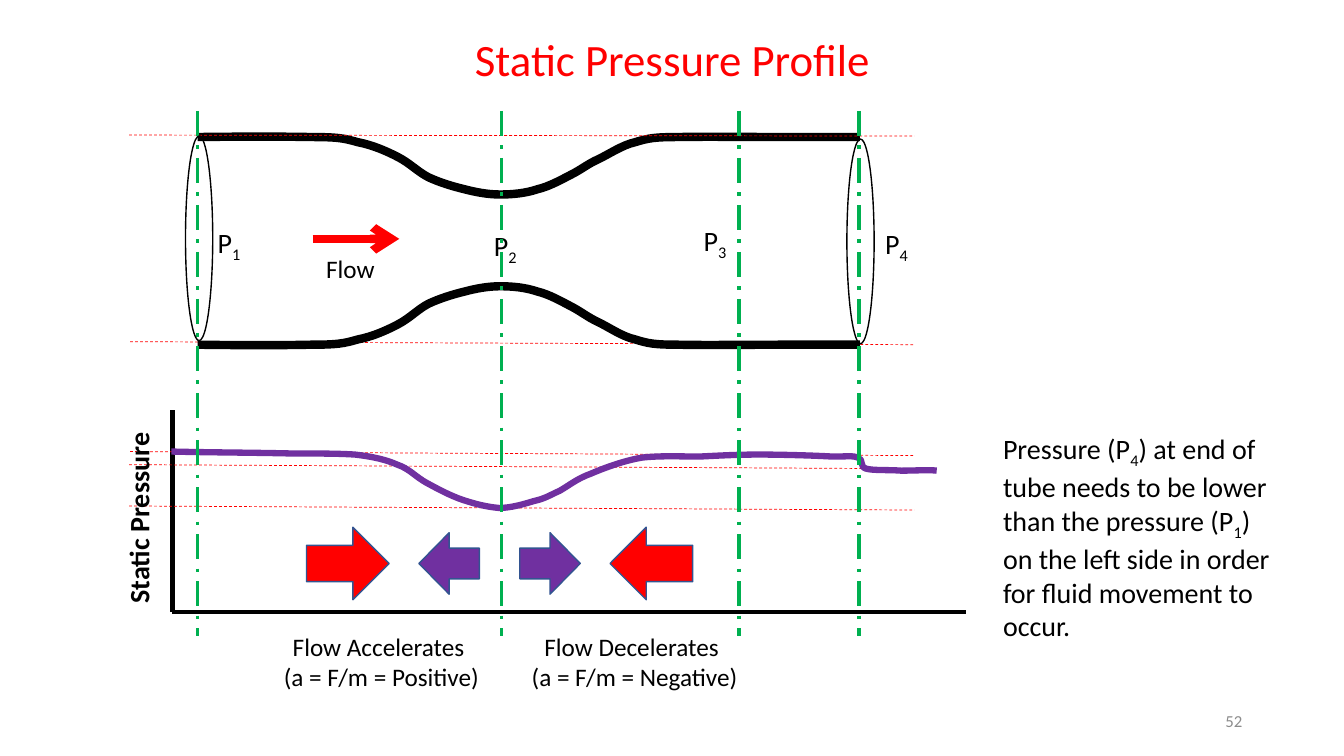
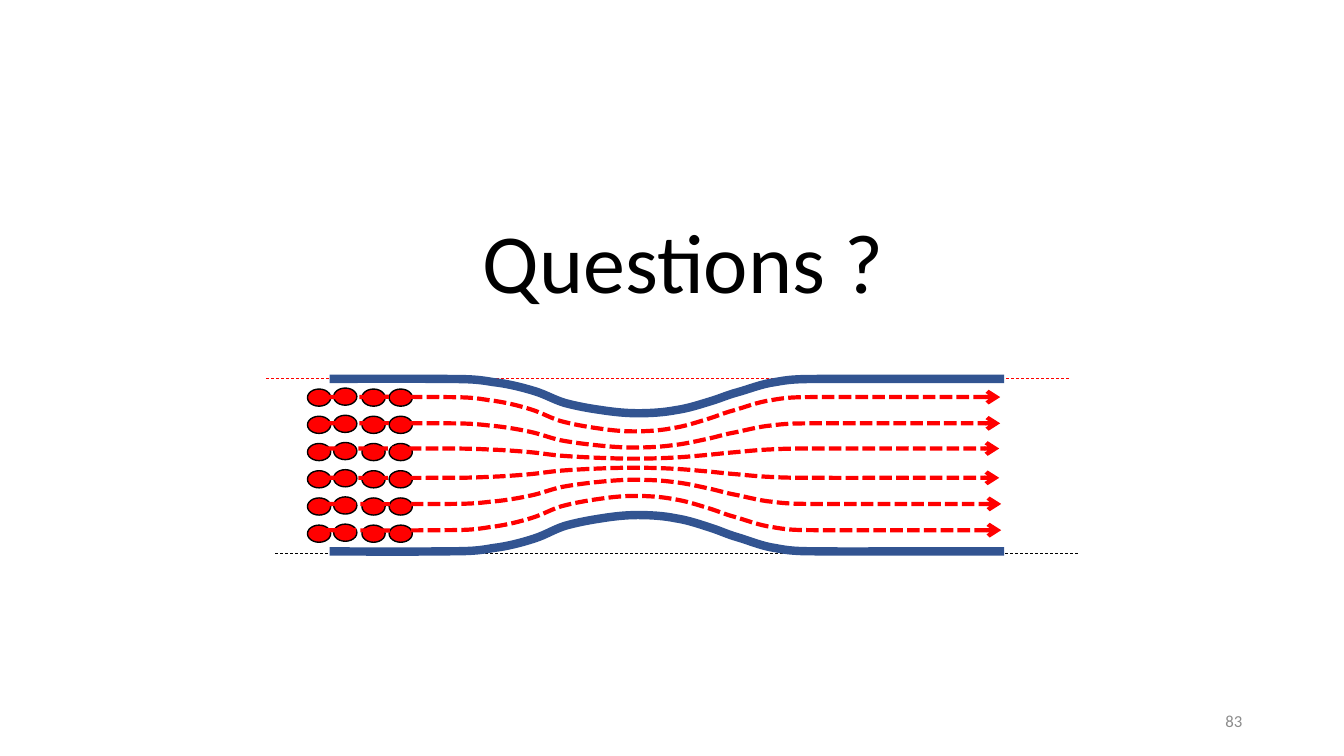
from itertools import product

from lxml.etree import SubElement
from pptx import Presentation
from pptx.dml.color import RGBColor
from pptx.enum.dml import MSO_LINE
from pptx.enum.shapes import MSO_CONNECTOR, MSO_SHAPE
from pptx.enum.text import MSO_ANCHOR, PP_ALIGN
from pptx.oxml.ns import qn
from pptx.util import Pt

PX = 9144  # EMU per px, 100 px to the inch


class Theme:
    font = "Calibri"
    black, red, green = "000000", "FF0000", "00B050"
    purple, blue, grey = "7030A0", "325491", "8C8C8C"
    closing, title, body, label, footer = 60, 32, 20, 18, 12
    wall, curve, axis, stream, station, outline, guide = 6, 4.5, 3, 3, 2.25, 1, 0.5


# ---- Content; lengths in px ----
# Venturi outline: x in px of a 657 px tube, y in percent of the throat depth.
# A start point, then cubic curves of three points each.
TUBE_LENGTH = 657
VENTURI = [
    (0, 0),
    (43, -1), (86, -1), (112, 0), (139, 0), (145, 2), (159, 9),
    (174, 14), (188, 25), (199, 35), (211, 46), (218, 60), (229, 70),
    (240, 79), (253, 86), (265, 91), (276, 96), (288, 100), (300, 100),
    (312, 100), (325, 98), (337, 91), (349, 86), (361, 74), (371, 65),
    (381, 56), (387, 47), (397, 39), (408, 30), (421, 14), (434, 9),
    (447, 2), (453, 0), (477, 0), (502, -1), (549, 0), (579, 0),
    (605, 0), (631, 0), (657, 0),
]
PRESSURE_CURVE = [
    (170, 448),
    (210, 449), (250, 449), (291, 450), (321, 450), (335, 450), (352, 451),
    (369, 453), (383, 456), (394, 461), (406, 465), (412, 473), (423, 479),
    (434, 485), (447, 492), (459, 496), (471, 500), (483, 503), (495, 504),
    (507, 504), (520, 500), (530, 497), (540, 495), (546, 491), (555, 487),
    (564, 482), (572, 475), (586, 470), (600, 464), (619, 457), (637, 454),
    (655, 452), (675, 453), (694, 453), (714, 452), (731, 451), (753, 451),
    (775, 451), (809, 452), (825, 453), (842, 453), (846, 452), (851, 454),
    (857, 456), (852, 463), (859, 465), (866, 467), (882, 466), (894, 467),
    (905, 467), (923, 466), (929, 467),
]
PIPE_GUIDES = [(128, 134, 907, 135), (129, 339, 907, 342)]
PRESSURE_GUIDES = [(129, 448, 907, 452), (128, 502, 907, 506), (128, 461, 907, 465)]
AXES = [(171, 407, 171, 607), (958, 607, 171, 607)]
STATIONS = [196, 497, 733, 852]
PIPE_ENDS = [(184, 135), (840, 138)]
PRESSURE_LABELS = [("P|1|", 206, 219), ("P|2|", 480, 222),
                   ("P|3|", 688, 217), ("P|4|", 868, 220)]
FORCE_ARROWS = [  # box, rotation, colour
    ((415, 529, 61, 60), 270, Theme.purple),
    ((309, 518, 72, 82), 90, Theme.red),
    ((610, 518, 72, 82), 270, Theme.red),
    ((515, 529, 61, 60), 90, Theme.purple),
]
FLOW_LABELS = [
    ("Flow Accelerates\n (a = F/m = Positive)", (264, 621, 223, 71)),
    ("Flow Decelerates\n (a = F/m = Negative)", (500, 621, 253, 71)),
]
# Text between bars is subscript
CONCLUSION = ("Pressure (P|4|) at end of tube needs to be lower than the pressure "
              "(P|1|) on the left side in order for fluid movement to occur.")

CLOSING_GUIDES = [((264, 375, 1060, 375), Theme.red), ((273, 549, 1070, 549), Theme.black)]
CLOSING_LENGTH = 669
CLOSING_WALLS = [(327, 376, 34), (327, 547, -36)]  # left, base, depth
STREAMLINES = [(323, 394, 34), (323, 420, 24), (322, 445, 10),
               (324, 526, -34), (324, 500, -24), (322, 474, -10)]
PARTICLE_COLUMNS = [(305, 386), (331, 385), (359, 386), (386, 386)]
PARTICLE_ROWS, PARTICLE_PITCH = 6, 27


# ---- Drawing helpers ----
def emu(*lengths):
    return [round(length * PX) for length in lengths]


def color(code):
    return RGBColor.from_string(code)


def style_line(shape, code, width, dash=None, arrow=False):
    shape.line.color.rgb = color(code)
    shape.line.width = Pt(width)
    if dash is not None:
        shape.line.dash_style = dash
    if arrow:
        SubElement(shape.line._get_or_add_ln(), qn("a:tailEnd"), type="arrow")


def add_text(slide, text, box, size, code=Theme.black, align=PP_ALIGN.LEFT,
             anchor=MSO_ANCHOR.TOP, bold=False, rotation=0):
    shape = slide.shapes.add_textbox(*emu(*box))
    shape.rotation = rotation
    frame = shape.text_frame
    frame.word_wrap = True
    frame.vertical_anchor = anchor
    for index, line in enumerate(text.split("\n")):
        paragraph = frame.add_paragraph() if index else frame.paragraphs[0]
        paragraph.alignment = align
        for position, piece in enumerate(line.split("|")):
            if not piece:
                continue
            run = paragraph.add_run()
            run.text = piece
            run.font.name = Theme.font
            run.font.size = Pt(size)
            run.font.bold = bold
            run.font.color.rgb = color(code)
            if position % 2:
                run.font._element.set("baseline", "-25000")


def add_line(slide, ends, code, width, dash=None, arrow=False):
    connector = slide.shapes.add_connector(MSO_CONNECTOR.STRAIGHT, *emu(*ends))
    style_line(connector, code, width, dash, arrow)
    SubElement(connector._element.spPr, qn("a:effectLst"))


def add_preset(slide, kind, box, line, fill=None, rotation=0):
    shape = slide.shapes.add_shape(kind, *emu(*box))
    shape.rotation = rotation
    shape.shadow.inherit = False
    if fill:
        shape.fill.solid()
        shape.fill.fore_color.rgb = color(fill)
    else:
        shape.fill.background()
    style_line(shape, line, Theme.outline)


def bend_segments(shape):
    """Join every three straight segments into one cubic curve."""
    segments = list(shape._element.iter(qn("a:lnTo")))
    for first in range(0, len(segments), 3):
        curve, *others = segments[first:first + 3]
        outline = curve.getparent()
        cubic = SubElement(outline, qn("a:cubicBezTo"))
        for segment in (curve, *others):
            cubic.append(segment[0])
            outline.remove(segment)


def add_curve(slide, points, code, width, dash=None, arrow=False):
    start, *rest = [emu(*point) for point in points]
    builder = slide.shapes.build_freeform(*start)
    builder.add_line_segments(rest, close=False)
    shape = builder.convert_to_shape()
    bend_segments(shape)
    shape.fill.background()
    shape.shadow.inherit = False
    style_line(shape, code, width, dash, arrow)


def venturi(left, base, depth, length=TUBE_LENGTH):
    return [(left + x * length / TUBE_LENGTH, base + y * depth / 100) for x, y in VENTURI]


def add_slide(presentation, number):
    slide = presentation.slides.add_slide(presentation.slide_layouts[6])
    add_text(slide, number, (942, 695, 300, 40), Theme.footer, Theme.grey,
             PP_ALIGN.RIGHT, MSO_ANCHOR.MIDDLE)
    return slide


# ---- Slides ----
def build_pressure_slide(presentation):
    slide = add_slide(presentation, "52")
    add_text(slide, "Static Pressure Profile", (310, 27, 714, 64), Theme.title,
             Theme.red, PP_ALIGN.CENTER)

    # Tube
    add_curve(slide, venturi(196, 136, 57), Theme.black, Theme.wall)
    for ends in PIPE_GUIDES:
        add_line(slide, ends, Theme.red, Theme.guide, MSO_LINE.DASH)
    add_curve(slide, venturi(196, 342, -58), Theme.black, Theme.wall)

    # Pressure graph
    for ends in AXES:
        add_line(slide, ends, Theme.black, Theme.axis)
    for text, left, top in PRESSURE_LABELS:
        add_text(slide, text, (left, top, 45, 44), Theme.body)
    for ends in PRESSURE_GUIDES:
        add_line(slide, ends, Theme.red, Theme.guide, MSO_LINE.DASH)
    add_curve(slide, PRESSURE_CURVE, Theme.purple, Theme.curve)
    for x in STATIONS:
        add_line(slide, (x, 110, x, 631), Theme.green, Theme.station,
                 MSO_LINE.LONG_DASH_DOT)
    for left, top in PIPE_ENDS:
        add_preset(slide, MSO_SHAPE.OVAL, (left, top, 27, 203), Theme.black)
    add_text(slide, "Static Pressure", (30, 488, 206, 35), Theme.body,
             bold=True, rotation=270)
    add_text(slide, CONCLUSION, (985, 423, 300, 212), Theme.body)

    # Flow and forces
    add_line(slide, (310, 237, 396, 237), Theme.red, Theme.wall, arrow=True)
    add_text(slide, "Flow", (300, 246, 95, 40), Theme.label, align=PP_ALIGN.CENTER)
    for box, rotation, fill in FORCE_ARROWS:
        add_preset(slide, MSO_SHAPE.UP_ARROW, box, Theme.blue, fill, rotation)
    for text, box in FLOW_LABELS:
        add_text(slide, text, box, Theme.label, align=PP_ALIGN.CENTER)


def build_closing_slide(presentation):
    slide = add_slide(presentation, "83")
    add_text(slide, "Questions ?", (469, 203, 465, 111), Theme.closing)
    for ends, code in CLOSING_GUIDES:
        add_line(slide, ends, code, Theme.guide, MSO_LINE.DASH)

    # Particles
    for (left, top), row in product(PARTICLE_COLUMNS, range(PARTICLE_ROWS)):
        box = (left, top + row * PARTICLE_PITCH, 23, 17)
        add_preset(slide, MSO_SHAPE.OVAL, box, Theme.black, Theme.red)

    # Walls and streamlines
    for wall in CLOSING_WALLS:
        add_curve(slide, venturi(*wall, CLOSING_LENGTH), Theme.blue, Theme.wall)
    for streamline in STREAMLINES:
        add_curve(slide, venturi(*streamline, CLOSING_LENGTH), Theme.red, Theme.stream,
                  MSO_LINE.SQUARE_DOT, arrow=True)


def main():
    presentation = Presentation()
    presentation.slide_width, presentation.slide_height = emu(1333, 750)
    build_pressure_slide(presentation)
    build_closing_slide(presentation)
    presentation.save("out.pptx")


if __name__ == "__main__":
    main()
